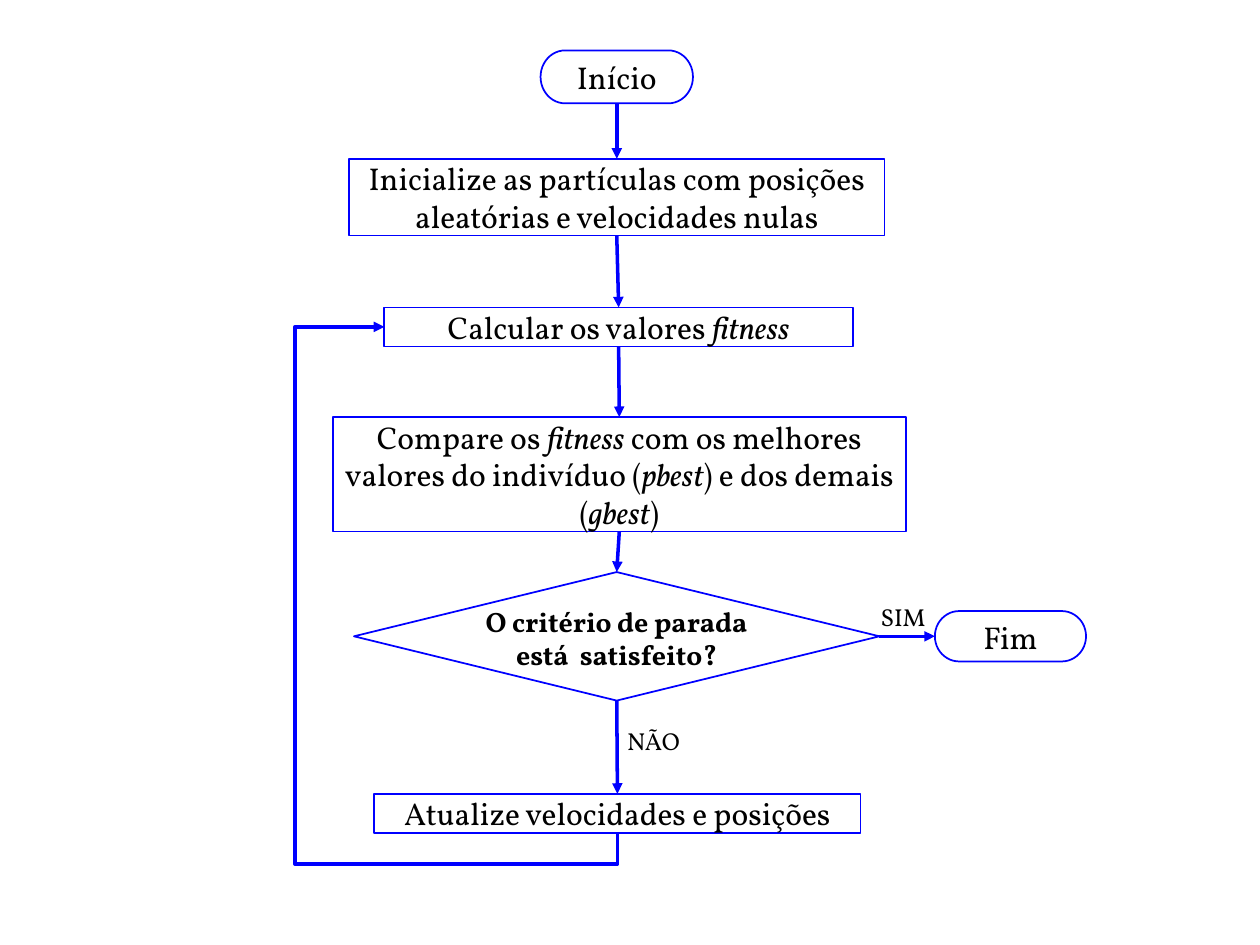
from lxml.etree import SubElement
from pptx import Presentation
from pptx.dml.color import RGBColor
from pptx.enum.shapes import MSO_CONNECTOR as Link, MSO_SHAPE as Shape
from pptx.enum.text import MSO_ANCHOR as Anchor, MSO_AUTO_SIZE as Auto, PP_ALIGN as Align
from pptx.oxml.ns import qn
from pptx.util import Inches, Pt

FONT, BLUE, BLACK = "Vollkorn", "0000FF", "000000"
TOP, LEFT, BOTTOM, RIGHT = range(4)

KINDS = {
    "step": dict(form=Shape.RECTANGLE, size=18, bold=False,
                 anchor=Anchor.MIDDLE, fit=Auto.SHAPE_TO_FIT_TEXT),
    "test": dict(form=Shape.FLOWCHART_DECISION, size=16, bold=True,
                 anchor=Anchor.TOP, fit=Auto.NONE),
    "end": dict(form=Shape.FLOWCHART_TERMINATOR, size=18, bold=False,
                anchor=Anchor.TOP, fit=Auto.NONE),
}

# name: kind, (left, top, width, height), text with *italic* parts
NODES = {
    "start": ("end", (4.29, 0.4, 1.21, 0.42), "Início"),
    "init": ("step", (2.77, 1.26, 4.25, 0.61),
             "Inicialize as partículas com posições aleatórias e velocidades nulas"),
    "fitness": ("step", (3.05, 2.44, 3.72, 0.31), "Calcular os valores *fitness*"),
    "compare": ("step", (2.64, 3.31, 4.55, 0.91),
                "Compare os *fitness* com os melhores valores do indivíduo "
                "(*pbest*) e dos demais (*gbest*)"),
    "stop": ("test", (2.81, 4.54, 4.17, 1.02), "O critério de parada está  satisfeito?"),
    "update": ("step", (2.97, 6.3, 3.86, 0.31), "Atualize velocidades e posições"),
    "finish": ("end", (7.42, 4.85, 1.2, 0.4), "Fim"),
}
CHAIN = ["start", "init", "fitness", "compare", "stop", "update"]
LABELS = [("SIM", (6.89, 4.73, 0.94, 0.33)), ("NÃO", (4.88, 5.71, 0.7, 0.33))]
LOOP_X, LOOP_Y = 2.34, 6.86  # outer corner of the return path


def color(code):
    return RGBColor.from_string(code)


def write(frame, text, size, bold=False):
    """Fill the first paragraph, with every *marked* part in italics."""
    para = frame.paragraphs[0]
    for i, part in enumerate(text.split("*")):
        if part:
            run = para.add_run()
            run.text = part
            look = dict(name=FONT, size=Pt(size), bold=bold, italic=i % 2 == 1)
            for key, value in look.items():
                setattr(run.font, key, value)
            run.font.color.rgb = color(BLACK)
    return para


def add_node(slide, kind, box, text):
    style = KINDS[kind]
    node = slide.shapes.add_shape(style["form"], *map(Inches, box))
    node.shadow.inherit = False
    node.fill.background()
    node.line.color.rgb = color(BLUE)
    node.line.width = Pt(1)
    frame = node.text_frame
    format = dict(margin_left=0, margin_top=0, margin_right=0, margin_bottom=0,
                  word_wrap=True, vertical_anchor=style["anchor"], auto_size=style["fit"])
    for key, value in format.items():
        setattr(frame, key, value)
    write(frame, text, style["size"], style["bold"]).alignment = Align.CENTER
    return node


def add_arrow(slide, a, side_a, b, side_b, form=Link.STRAIGHT):
    arrow = slide.shapes.add_connector(form, 0, 0, 0, 0)
    arrow.begin_connect(a, side_a)
    arrow.end_connect(b, side_b)
    arrow.line.color.rgb = color(BLUE)
    arrow.line.width = Pt(2)
    SubElement(arrow.line._get_or_add_ln(), qn("a:tailEnd"), type="triangle")
    SubElement(arrow._element.spPr, qn("a:effectLst"))
    return arrow


def bend_back(arrow):
    """Lead the arrow down, out to the loop corner, up and into its end."""
    x1, y1, x2, y2 = arrow.begin_x, arrow.begin_y, arrow.end_x, arrow.end_y
    wide, high = x1 - x2, y1 - y2
    # The preset is a quarter turn off, so its width is the height of the path.
    arrow.left, arrow.top = (x1 + x2 - high) // 2, (y1 + y2 - wide) // 2
    arrow.width, arrow.height = high, wide
    props = arrow._element.spPr
    frame = props.find(qn("a:xfrm"))
    frame.attrib.pop("flipH", None)
    frame.set("flipV", "1")
    frame.set("rot", str(270 * 60000))
    shape = props.find(qn("a:prstGeom"))
    shape.set("prst", "bentConnector4")
    guides = shape.find(qn("a:avLst"))
    if guides is None:
        guides = SubElement(shape, qn("a:avLst"))
    ratios = [(y1 - Inches(LOOP_Y)) / high, (x1 - Inches(LOOP_X)) / wide]
    for i, ratio in enumerate(ratios, 1):
        SubElement(guides, qn("a:gd"), name=f"adj{i}", fmla=f"val {round(ratio * 100000)}")


def main():
    deck = Presentation()
    deck.slide_width, deck.slide_height = Inches(10), Inches(7.5)
    slide = deck.slides.add_slide(deck.slide_layouts[6])
    nodes = {name: add_node(slide, *node) for name, node in NODES.items()}
    for a, b in zip(CHAIN, CHAIN[1:]):
        add_arrow(slide, nodes[a], BOTTOM, nodes[b], TOP)
    add_arrow(slide, nodes["stop"], RIGHT, nodes["finish"], LEFT)
    bend_back(add_arrow(slide, nodes["update"], BOTTOM, nodes["fitness"], LEFT, Link.ELBOW))
    for text, box in LABELS:
        frame = slide.shapes.add_textbox(*map(Inches, box)).text_frame
        frame.word_wrap = True
        frame.auto_size = Auto.SHAPE_TO_FIT_TEXT
        write(frame, text, 14)
    deck.save("out.pptx")


if __name__ == "__main__":
    main()
